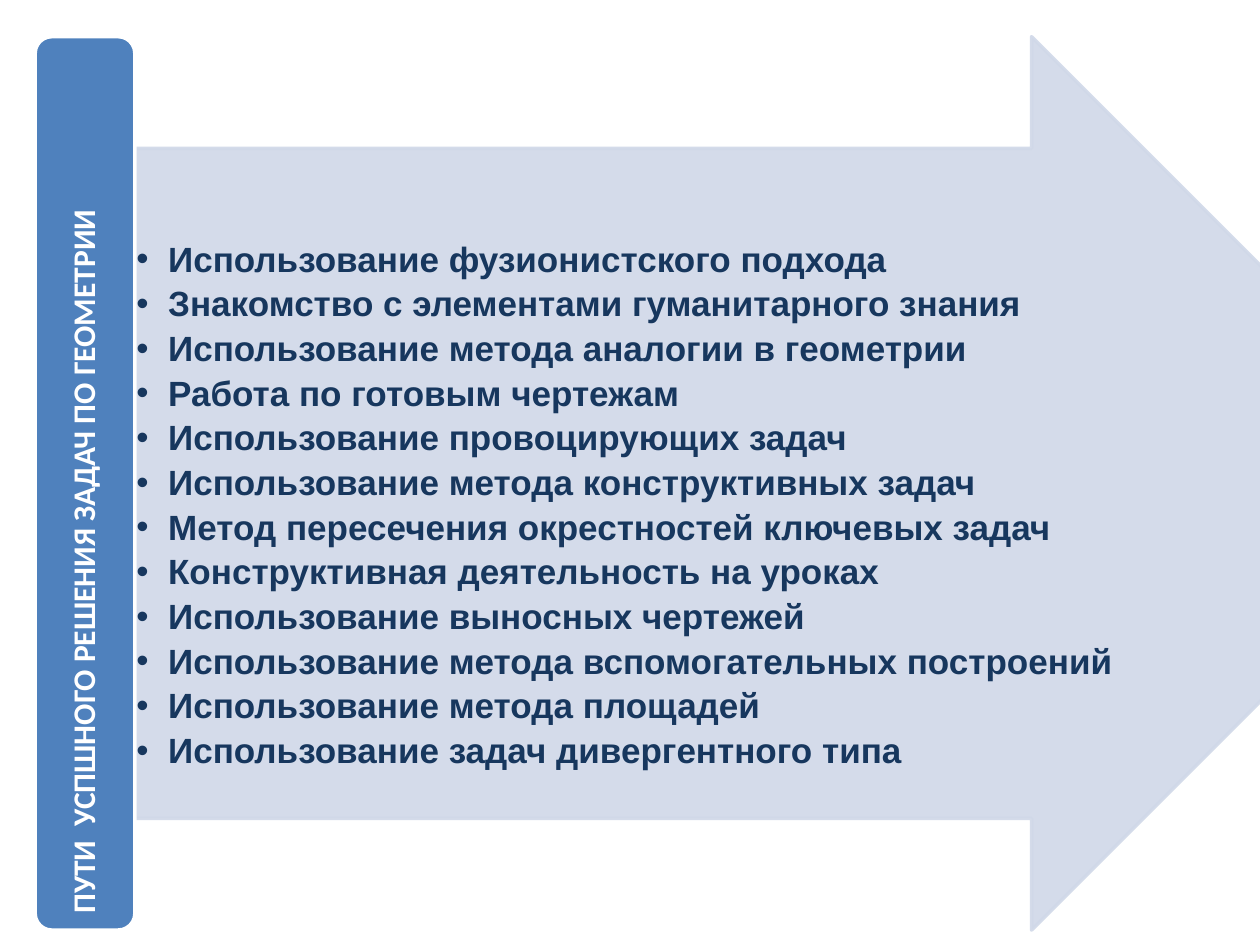
from lxml.etree import SubElement
from pptx import Presentation
from pptx.dml.color import RGBColor
from pptx.enum.shapes import MSO_SHAPE as Shape
from pptx.enum.text import MSO_ANCHOR as Anchor, PP_ALIGN as Align
from pptx.oxml.ns import qn
from pptx.util import Cm, Pt

HEADING = "ПУТИ  УСПШНОГО РЕШЕНИЯ ЗАДАЧ ПО ГЕОМЕТРИИ"
METHODS = [
    "Использование фузионистского подхода",
    "Знакомство с элементами гуманитарного знания",
    "Использование метода аналогии в геометрии",
    "Работа по готовым чертежам",
    "Использование провоцирующих задач",
    "Использование метода конструктивных задач",
    "Метод пересечения окрестностей ключевых задач",
    "Конструктивная деятельность на уроках",
    "Использование выносных чертежей",
    "Использование метода вспомогательных построений",
    "Использование метода площадей",
    "Использование задач дивергентного типа",
]
HEADING_FONT = {"name": "Calibri", "size": Pt(18), "bold": True}
METHOD_FONT = {"name": "Arial", "size": Pt(20), "bold": True}
METHOD_SPACING = {"alignment": Align.LEFT, "line_spacing": 0.9, "space_after": Pt(3.9)}


def color(hex_code):
    return RGBColor.from_string(hex_code)


def set_all(target, values):
    for name, value in values.items():
        setattr(target, name, value)


def set_margins(frame, horizontal, vertical):
    set_all(frame, {
        "margin_left": Cm(horizontal), "margin_right": Cm(horizontal),
        "margin_top": Cm(vertical), "margin_bottom": Cm(vertical),
    })


def add_filled(slide, preset, box, fill, line):
    shape = slide.shapes.add_shape(preset, *map(Cm, box))
    shape.shadow.inherit = False
    shape.fill.solid()
    shape.fill.fore_color.rgb = color(fill)
    shape.line.color.rgb = color(line)
    shape.line.width = Pt(2)
    return shape


def write(paragraph, text, font, hex_code):
    run = paragraph.add_run()
    run.text = text
    set_all(run.font, font)
    run.font.color.rgb = color(hex_code)


def add_bullet(paragraph, indent):
    props = paragraph._p.get_or_add_pPr()
    props.set("marL", str(Cm(indent)))
    props.set("indent", str(-Cm(indent)))
    SubElement(props, qn("a:buFont"), typeface="Arial")
    SubElement(props, qn("a:buChar"), char="•")


def add_heading_bar(slide, box):
    """Rounded bar whose heading reads from bottom to top."""
    bar = add_filled(slide, Shape.ROUNDED_RECTANGLE, box, "4F81BD", "FFFFFF")
    frame = bar.text_frame
    frame._txBody.bodyPr.set("vert", "vert270")
    set_margins(frame, 0.2, 0.23)
    set_all(frame, {"word_wrap": True, "vertical_anchor": Anchor.MIDDLE})
    heading = frame.paragraphs[0]
    set_all(heading, {"alignment": Align.LEFT, "line_spacing": 0.9})
    write(heading, HEADING, HEADING_FONT, "FFFFFF")


def add_methods_arrow(slide, box):
    """Translucent arrow, running past the slide edge, with the bulleted methods."""
    left, top, width, height = box
    arrow = add_filled(slide, Shape.RIGHT_ARROW, box, "D0D8E8", "D0D8E8")
    arrow.adjustments[0] = 0.75
    arrow.adjustments[1] = 0.5
    for fill_color in arrow._element.spPr.iter(qn("a:srgbClr")):
        SubElement(fill_color, qn("a:alpha"), val="90000")

    list_box = (left, top + 4.11, width * 0.75, height * 0.65)
    frame = slide.shapes.add_textbox(*map(Cm, list_box)).text_frame
    frame.word_wrap = True
    set_margins(frame, 0.03, 0.03)
    for index, method in enumerate(METHODS):
        paragraph = frame.add_paragraph() if index else frame.paragraphs[0]
        set_all(paragraph, METHOD_SPACING)
        add_bullet(paragraph, 0.64)
        write(paragraph, method, METHOD_FONT, "17375E")


def main():
    deck = Presentation()
    set_all(deck, {"slide_width": Cm(25.4), "slide_height": Cm(19.05)})
    slide = deck.slides.add_slide(deck.slide_layouts[6])
    left, top, bar_width, height = 0.71, 0.74, 2.01, 18.01
    add_methods_arrow(slide, (left + bar_width, top, 27.08, height))
    add_heading_bar(slide, (left, top, bar_width, height))
    deck.save("out.pptx")


if __name__ == "__main__":
    main()
